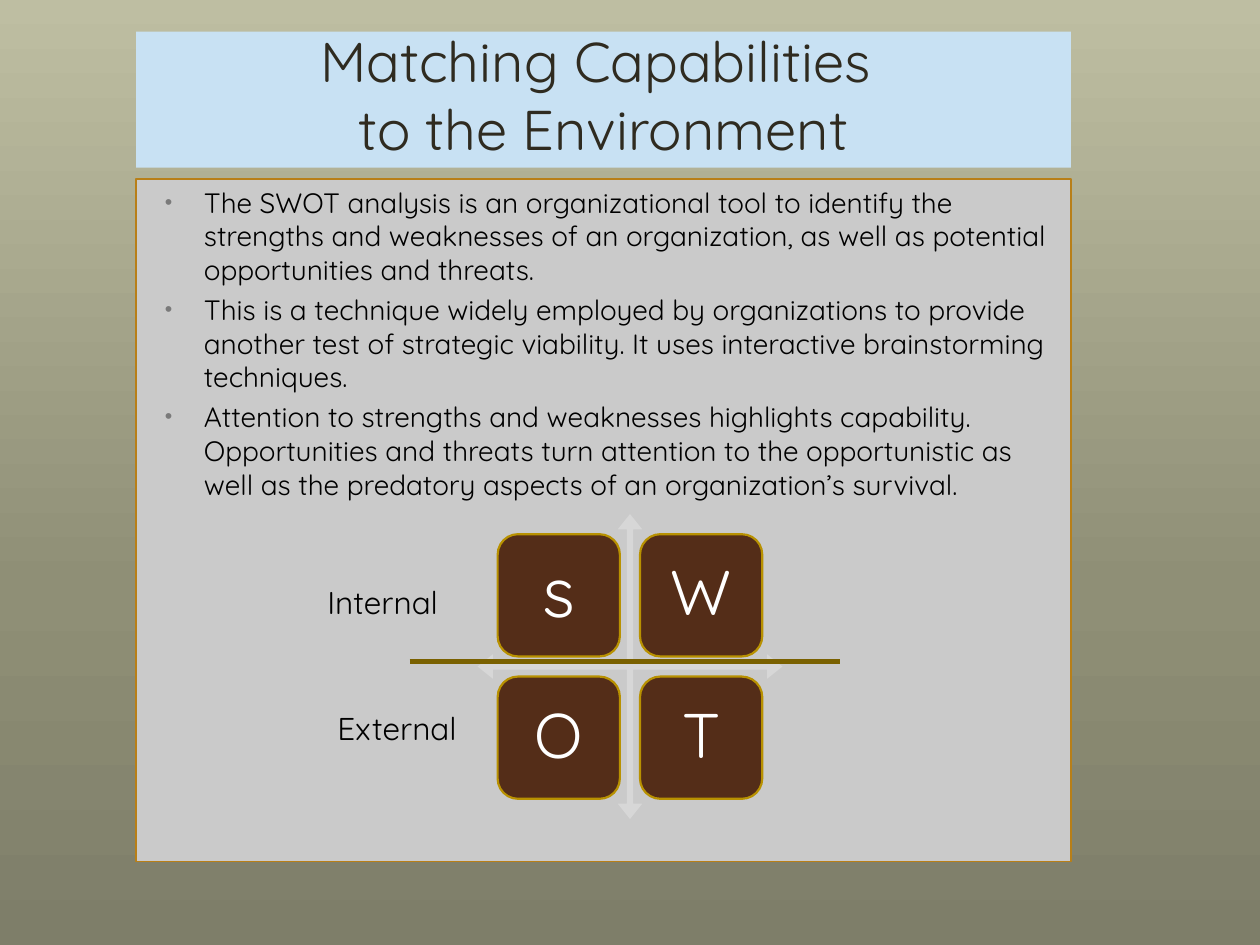
from copy import deepcopy

from lxml.etree import SubElement
from pptx import Presentation
from pptx.dml.color import RGBColor
from pptx.enum.shapes import MSO_CONNECTOR, MSO_SHAPE
from pptx.enum.text import MSO_ANCHOR, PP_ALIGN
from pptx.oxml.ns import qn
from pptx.util import Inches, Pt

WIDTH, HEIGHT = 10, 7.5
FONT = "Quicksand"
PANEL_LEFT, PANEL_WIDTH = 1.08, 7.42
MATRIX_CENTER_X, MATRIX_CENTER_Y = WIDTH / 2, 5.29
ARROW_SIZE, TILE_SIZE, TILE_PITCH = 2.42, 0.97, 1.13

TITLE = "Matching Capabilities \vto the Environment"
BULLETS = [
    "The SWOT analysis is an organizational tool to identify the strengths and "
    "weaknesses of an organization, as well as potential opportunities and threats.",
    "This is a technique widely employed by organizations to provide another test "
    "of strategic viability. It uses interactive brainstorming techniques.",
    "Attention to strengths and weaknesses highlights capability. Opportunities and "
    "threats turn attention to the opportunistic as well as the predatory aspects "
    "of an organization’s survival.",
]
# Letter and text size, by row of the matrix
SWOT = [[("s", 40), ("W", 36)], [("O", 36), ("T", 36)]]


def color(value):
    return RGBColor.from_string(value)


def paint_background(page, stops):
    """Vertical gradient from top to bottom; stops are (share, colour)."""
    fill = page.background.fill
    fill.gradient()
    fill.gradient_angle = 270
    stop_list = page.element.xpath(".//a:gsLst")[0]
    while len(stop_list) < len(stops):
        stop_list.append(deepcopy(stop_list[0]))
    for stop, (share, value) in zip(fill.gradient_stops, stops):
        stop.position = share
        stop.color.rgb = color(value)


def add_box(page, kind, left, top, width, height, fill, line=None, line_width=1):
    box = page.shapes.add_shape(
        kind, Inches(left), Inches(top), Inches(width), Inches(height))
    box.shadow.inherit = False
    box.fill.solid()
    box.fill.fore_color.rgb = color(fill)
    if line:
        box.line.color.rgb = color(line)
        box.line.width = Pt(line_width)
    else:
        box.line.fill.background()
    return box


def write(box, *texts, size, text_color="000000", align=PP_ALIGN.LEFT,
          anchor=MSO_ANCHOR.TOP, line_spacing=None, space_before=0, bullet=False):
    frame = box.text_frame
    frame.word_wrap = True
    frame.vertical_anchor = anchor
    for index, text in enumerate(texts):
        para = frame.add_paragraph() if index else frame.paragraphs[0]
        para.text = text
        para.alignment = align
        para.line_spacing = line_spacing
        para.space_before = Pt(space_before)
        for span in para.runs:
            span.font.name = FONT
            span.font.size = Pt(size)
            span.font.color.rgb = color(text_color)
        if bullet:
            add_bullet(para)


def add_bullet(para):
    properties = para._p.get_or_add_pPr()
    properties.set("marL", str(Inches(0.44)))
    properties.set("indent", str(-Inches(0.31)))
    bullet_color = SubElement(properties, qn("a:buClr"))
    SubElement(bullet_color, qn("a:srgbClr"), val="7A7A7A")
    SubElement(properties, qn("a:buSzPct"), val="76000")
    SubElement(properties, qn("a:buFont"), typeface="Arial")
    SubElement(properties, qn("a:buChar"), char="•")


def add_label(page, text, left, top, width):
    box = page.shapes.add_textbox(
        Inches(left), Inches(top), Inches(width), Inches(0.4))
    write(box, text, size=18)


def add_divider(page, left, right, top):
    line = page.shapes.add_connector(
        MSO_CONNECTOR.STRAIGHT, Inches(left), Inches(top), Inches(right), Inches(top))
    line.line.color.rgb = color("7A6100")
    line.line.width = Pt(3)
    SubElement(line._element.spPr, qn("a:effectLst"))


def add_matrix(page):
    arrow = add_box(page, MSO_SHAPE.QUAD_ARROW, MATRIX_CENTER_X - ARROW_SIZE / 2,
                    MATRIX_CENTER_Y - ARROW_SIZE / 2, ARROW_SIZE, ARROW_SIZE, "D7D7D7")
    for index, share in enumerate((0.02, 0.04, 0.05)):
        arrow.adjustments[index] = share

    first_offset = (TILE_PITCH + TILE_SIZE) / 2
    for row, letters in enumerate(SWOT):
        for column, (letter, size) in enumerate(letters):
            tile = add_box(page, MSO_SHAPE.ROUNDED_RECTANGLE,
                           MATRIX_CENTER_X - first_offset + column * TILE_PITCH,
                           MATRIX_CENTER_Y - first_offset + row * TILE_PITCH,
                           TILE_SIZE, TILE_SIZE, "542D18", "B89101", 1.25)
            write(tile, letter, size=size, text_color="FFFFFF", line_spacing=0.9,
                  align=PP_ALIGN.CENTER, anchor=MSO_ANCHOR.MIDDLE)


def main():
    deck = Presentation()
    deck.slide_width, deck.slide_height = Inches(WIDTH), Inches(HEIGHT)
    page = deck.slides.add_slide(deck.slide_layouts[6])
    paint_background(page, [(0, "BEBEA2"), (0.62, "8F8F76"), (1, "7E7E69")])

    # Title
    title = add_box(page, MSO_SHAPE.RECTANGLE, PANEL_LEFT, 0.25, PANEL_WIDTH, 1.08,
                    "C8E1F3")
    write(title, TITLE, size=32, text_color="2F2B20", align=PP_ALIGN.CENTER,
          anchor=MSO_ANCHOR.BOTTOM)

    # Explanation
    body = add_box(page, MSO_SHAPE.RECTANGLE, PANEL_LEFT, 1.42, PANEL_WIDTH, 5.42,
                   "CACACA", "B87F18", 0.75)
    write(body, *BULLETS, size=16, space_before=3.8, bullet=True)

    # SWOT matrix, split into internal and external halves
    add_matrix(page)
    add_divider(page, 3.25, 6.67, 5.25)
    add_label(page, "Internal", 2.5, 4.58, 1.33)
    add_label(page, "External", 2.58, 5.58, 1.25)

    deck.save("out.pptx")


if __name__ == "__main__":
    main()
